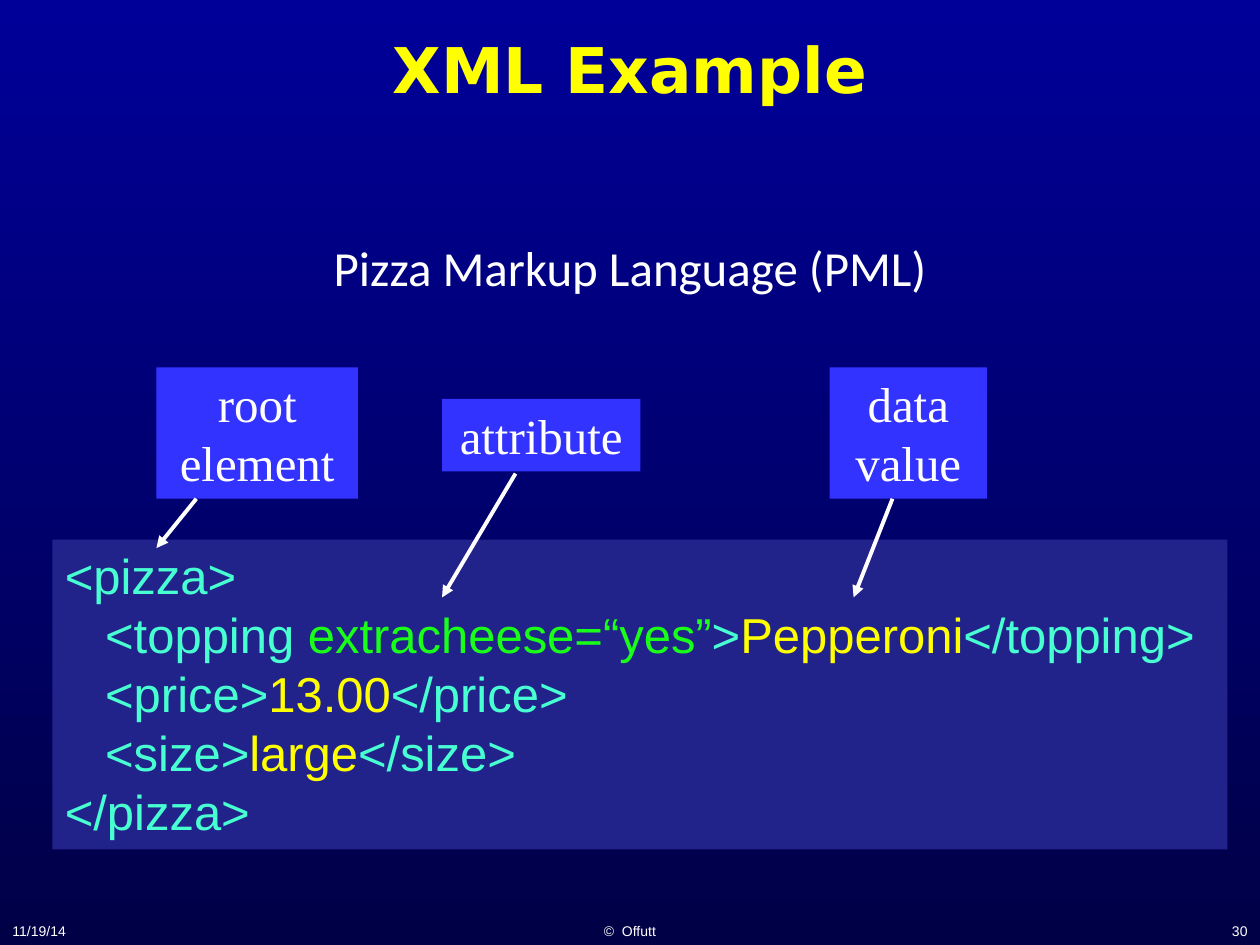
"""Build the XML Example slide: a labelled pizza document."""
from dataclasses import dataclass
from typing import Any

import lxml.etree
import pptx
import pptx.dml.color
import pptx.enum.shapes
import pptx.enum.text
import pptx.oxml.ns
import pptx.util

COLORS = {
    "top": "000099", "bottom": "000047", "title": "FFFF00", "text": "FFFFFF",
    "panel": "22228B", "label": "3333FF",
    "tag": "47FFD1", "attribute": "19FF19", "data": "FFFF00",
}
ALIGN = pptx.enum.text.PP_ALIGN
ANCHOR = pptx.enum.text.MSO_ANCHOR
COLS, ROWS = 120, 90
WIDTH, HEIGHT = pptx.util.Inches(10), pptx.util.Inches(7.5)
CODE_INDENT = pptx.util.Inches(0.32)


@dataclass
class Box:
    """Position and size in grid columns and rows."""
    col: float
    row: float
    cols: float
    rows: float

    def emu(self) -> tuple[int, int, int, int]:
        """Return left, top, width and height."""
        return x(self.col), y(self.row), x(self.cols), y(self.rows)


@dataclass
class Text:
    """A single-paragraph text block."""
    text: str
    box: Box
    size: float
    font: str
    color: str = "text"
    align: Any = ALIGN.CENTER
    anchor: Any = ANCHOR.TOP
    bold: bool = False
    spacing: float = 1.0


@dataclass
class Callout:
    """A label with an arrow into the code."""
    text: str
    box: Box
    start: tuple[float, float]
    end: tuple[float, float]


@dataclass
class CodeLine:
    """A line of code as (text, colour) pieces."""
    pieces: list[tuple[str, str]]
    indented: bool = True


TEXTS = [
    Text("11/19/14", Box(0, 87, 25, 3), 8, "Arial", align=ALIGN.LEFT, anchor=ANCHOR.BOTTOM),
    Text("©  Offutt", Box(41, 87, 38, 3), 8, "Arial", anchor=ANCHOR.BOTTOM),
    Text("30", Box(95, 87, 25, 3), 8, "Arial", align=ALIGN.RIGHT, anchor=ANCHOR.BOTTOM),
    Text("XML Example", Box(2, 1, 116, 11), 36, "DejaVu Sans", "title",
         anchor=ANCHOR.MIDDLE, bold=True),
    Text("Pizza Markup Language (PML)", Box(3.5, 22.4, 113, 20.2), 28, "Calibri", spacing=0.95),
]
CODE_BOX = Box(5, 51.4, 111.9, 29.5)
CODE = [
    CodeLine([("<pizza>", "tag")], False),
    CodeLine([("<topping ", "tag"), ("extracheese=“yes”", "attribute"), (">", "tag"),
              ("Pepperoni", "data"), ("</topping>", "tag")]),
    CodeLine([("<price>", "tag"), ("13.00", "data"), ("</price>", "tag")]),
    CodeLine([("<size>", "tag"), ("large", "data"), ("</size>", "tag")]),
    CodeLine([("</pizza>", "tag")], False),
]
CALLOUTS = [
    Callout("root element", Box(14.9, 35, 19.2, 12.5), (18.7, 47.5), (14.9, 52.2)),
    Callout("attribute", Box(42.1, 38, 18.9, 6.9), (49.1, 45.1), (42.1, 56.9)),
    Callout("data value", Box(79, 35, 15, 12.5), (85, 47.5), (81.3, 56.9)),
]


def x(cols: float) -> int:
    """Convert columns to EMU."""
    return round(WIDTH * cols / COLS)


def y(rows: float) -> int:
    """Convert rows to EMU."""
    return round(HEIGHT * rows / ROWS)


def rgb(name: str) -> pptx.dml.color.RGBColor:
    """Look up a colour."""
    return pptx.dml.color.RGBColor.from_string(COLORS[name])


def style(r: Any, size: float, font: str, color: str, bold: bool = False) -> None:
    """Format a run."""
    r.font.size = pptx.util.Pt(size)
    r.font.name = font
    r.font.bold = bold
    r.font.color.rgb = rgb(color)


def fill_text(sp: Any, item: Text) -> None:
    """Write and format a text block in a shape."""
    tf = sp.text_frame
    tf.word_wrap = True
    tf.vertical_anchor = item.anchor
    tf.text = item.text
    p = tf.paragraphs[0]
    p.alignment = item.align
    p.line_spacing = item.spacing
    style(p.runs[0], item.size, item.font, item.color, item.bold)


def add_panel(shapes: Any, box: Box, color: str) -> Any:
    """Add a plain filled rectangle."""
    sp = shapes.add_shape(pptx.enum.shapes.MSO_SHAPE.RECTANGLE, *box.emu())
    sp.shadow.inherit = False
    sp.fill.solid()
    sp.fill.fore_color.rgb = rgb(color)
    sp.line.fill.background()
    return sp


def add_code(shapes: Any) -> None:
    """Add the coloured code listing."""
    tf = add_panel(shapes, CODE_BOX, "panel").text_frame
    tf.word_wrap = True
    tf.vertical_anchor = ANCHOR.TOP
    for i, line in enumerate(CODE):
        p = tf.add_paragraph() if i else tf.paragraphs[0]
        p.alignment = ALIGN.LEFT
        if line.indented:
            p._p.get_or_add_pPr().set("marL", str(CODE_INDENT))
        for text, color in line.pieces:
            r = p.add_run()
            r.text = text
            style(r, 28, "Arial", color)


def add_callout(shapes: Any, item: Callout) -> None:
    """Add a grouped label and arrow."""
    group = shapes.add_group_shape().shapes
    sp = add_panel(group, item.box, "label")
    fill_text(sp, Text(item.text, item.box, 28, "Times New Roman"))
    (x1, y1), (x2, y2) = item.start, item.end
    arrow = group.add_connector(pptx.enum.shapes.MSO_CONNECTOR.STRAIGHT, x(x1), y(y1), x(x2), y(y2))
    arrow.line.color.rgb = rgb("text")
    arrow.line.width = pptx.util.Pt(2.25)
    qn = pptx.oxml.ns.qn
    lxml.etree.SubElement(arrow.line._get_or_add_ln(), qn("a:tailEnd"), type="triangle")
    lxml.etree.SubElement(arrow._element.spPr, qn("a:effectLst"))


def main() -> None:
    """Build and save the slide."""
    prs = pptx.Presentation()
    prs.slide_width, prs.slide_height = WIDTH, HEIGHT
    s = prs.slides.add_slide(prs.slide_layouts[6])
    fill = s.background.fill
    fill.gradient()
    fill.gradient_angle = 270
    for stop, name in zip(fill.gradient_stops, ("top", "bottom")):
        stop.color.rgb = rgb(name)
    for item in TEXTS:
        fill_text(s.shapes.add_textbox(*item.box.emu()), item)
    add_code(s.shapes)
    for callout in CALLOUTS:
        add_callout(s.shapes, callout)
    prs.save("out.pptx")


if __name__ == "__main__":
    main()
